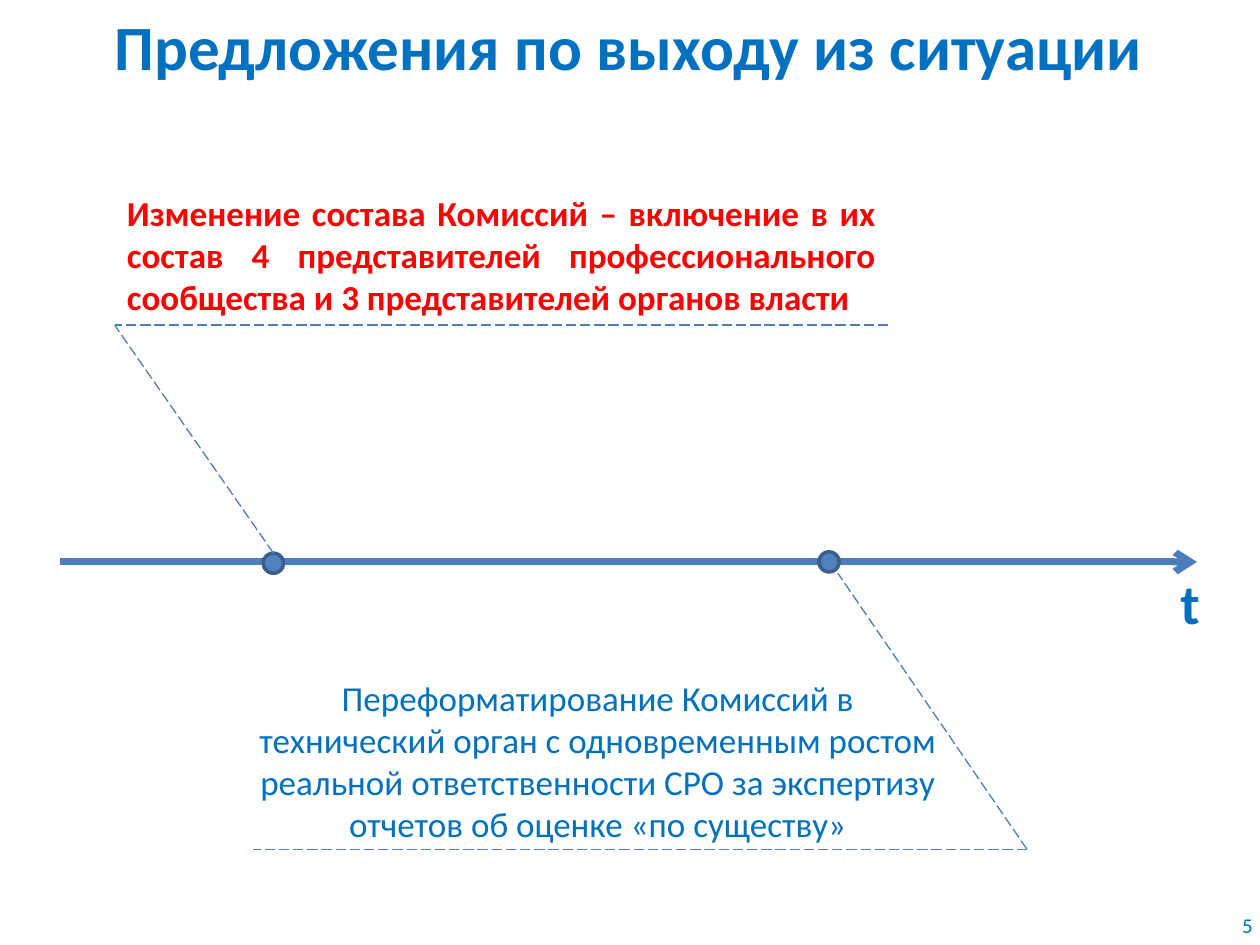
from dataclasses import dataclass

from lxml import etree
from pptx import Presentation
from pptx.dml.color import RGBColor
from pptx.enum import dml, shapes, text
from pptx.oxml import ns
from pptx.util import Inches, Pt


@dataclass(frozen=True)
class Theme:
    """Hold the colours, font and sizes of the slide."""
    font: str = "Calibri"
    blue: str = "0070C0"
    red: str = "FF0000"
    line: str = "4B7EBC"
    marker_fill: str = "4F81BD"
    marker_line: str = "3A5F8C"
    title_size: int = 36
    axis_size: int = 32
    body_size: int = 20
    number_size: int = 12
    axis_width: float = 4
    marker_width: float = 2
    leader_width: float = 0.75


THEME = Theme()
MARKER_SIZE = 0.16


def add_text(slide, content, box, size=THEME.body_size, color=THEME.blue,
             bold=False, align=text.PP_ALIGN.LEFT, wrap=True):
    """Add a text box with one formatted paragraph."""
    frame = slide.shapes.add_textbox(*map(Inches, box)).text_frame
    frame.word_wrap = wrap
    frame.auto_size = text.MSO_AUTO_SIZE.SHAPE_TO_FIT_TEXT
    paragraph = frame.paragraphs[0]
    paragraph.alignment = align
    run = paragraph.add_run()
    run.text = content
    run.font.name = THEME.font
    run.font.size = Pt(size)
    run.font.bold = bold
    run.font.color.rgb = RGBColor.from_string(color)


def add_line(slide, start, end, width):
    """Add a straight connector without a shadow."""
    connector = slide.shapes.add_connector(
        shapes.MSO_CONNECTOR.STRAIGHT, *map(Inches, (*start, *end)))
    connector.line.color.rgb = RGBColor.from_string(THEME.line)
    connector.line.width = Pt(width)
    etree.SubElement(connector._element.spPr, ns.qn("a:effectLst"))
    return connector


def add_axis(slide, start, end):
    """Add the time axis with an arrowhead at its end."""
    axis = add_line(slide, start, end, THEME.axis_width)
    etree.SubElement(axis.line._get_or_add_ln(), ns.qn("a:tailEnd"), type="arrow")


def add_leader(slide, start, end):
    """Add a thin dashed leader line."""
    leader = add_line(slide, start, end, THEME.leader_width)
    leader.line.dash_style = dml.MSO_LINE.LONG_DASH
    return leader


def add_marker(slide, left, top):
    """Add a round event marker on the axis."""
    marker = slide.shapes.add_shape(
        shapes.MSO_SHAPE.OVAL, *map(Inches, (left, top, MARKER_SIZE, MARKER_SIZE)))
    marker.shadow.inherit = False
    marker.fill.solid()
    marker.fill.fore_color.rgb = RGBColor.from_string(THEME.marker_fill)
    marker.line.color.rgb = RGBColor.from_string(THEME.marker_line)
    marker.line.width = Pt(THEME.marker_width)
    return marker


def main():
    """Build the timeline slide and save it."""
    presentation = Presentation()
    presentation.slide_width = Inches(10)
    presentation.slide_height = Inches(7.5)
    slide = presentation.slides.add_slide(presentation.slide_layouts[6])

    add_text(slide, "Предложения по выходу из ситуации", (-0.01, 0.01, 10, 0.71),
             size=THEME.title_size, bold=True, align=text.PP_ALIGN.CENTER)
    add_text(slide, "5", (9.45, 7.19, 0.59, 0.3),
             size=THEME.number_size, align=text.PP_ALIGN.RIGHT)

    add_axis(slide, (0.48, 4.46), (9.5, 4.46))
    add_text(slide, "t", (9.27, 4.46, 0.36, 0.64),
             size=THEME.axis_size, bold=True, wrap=False)
    add_marker(slide, 6.5, 4.38)
    first_marker = add_marker(slide, 2.09, 4.39)

    add_text(slide, "Изменение состава Комиссий – включение в их состав "
             "4 представителей профессионального сообщества и "
             "3 представителей органов власти", (0.91, 1.47, 6.14, 1.11),
             color=THEME.red, bold=True, align=text.PP_ALIGN.JUSTIFY)
    first_corner, second_corner = (0.91, 2.58), (8.15, 6.74)
    first_leader = add_leader(slide, (2.17, 4.39), first_corner)
    first_leader.begin_connect(first_marker, 0)
    add_leader(slide, (7.05, 2.58), first_corner)
    add_leader(slide, second_corner, (6.65, 4.55))
    add_leader(slide, second_corner, (2.01, 6.74))
    add_text(slide, "Переформатирование Комиссий в технический орган "
             "с одновременным ростом реальной ответственности СРО "
             "за экспертизу отчетов об оценке «по существу»",
             (1.89, 5.32, 5.71, 1.45), align=text.PP_ALIGN.CENTER)

    presentation.save("out.pptx")


if __name__ == "__main__":
    main()
